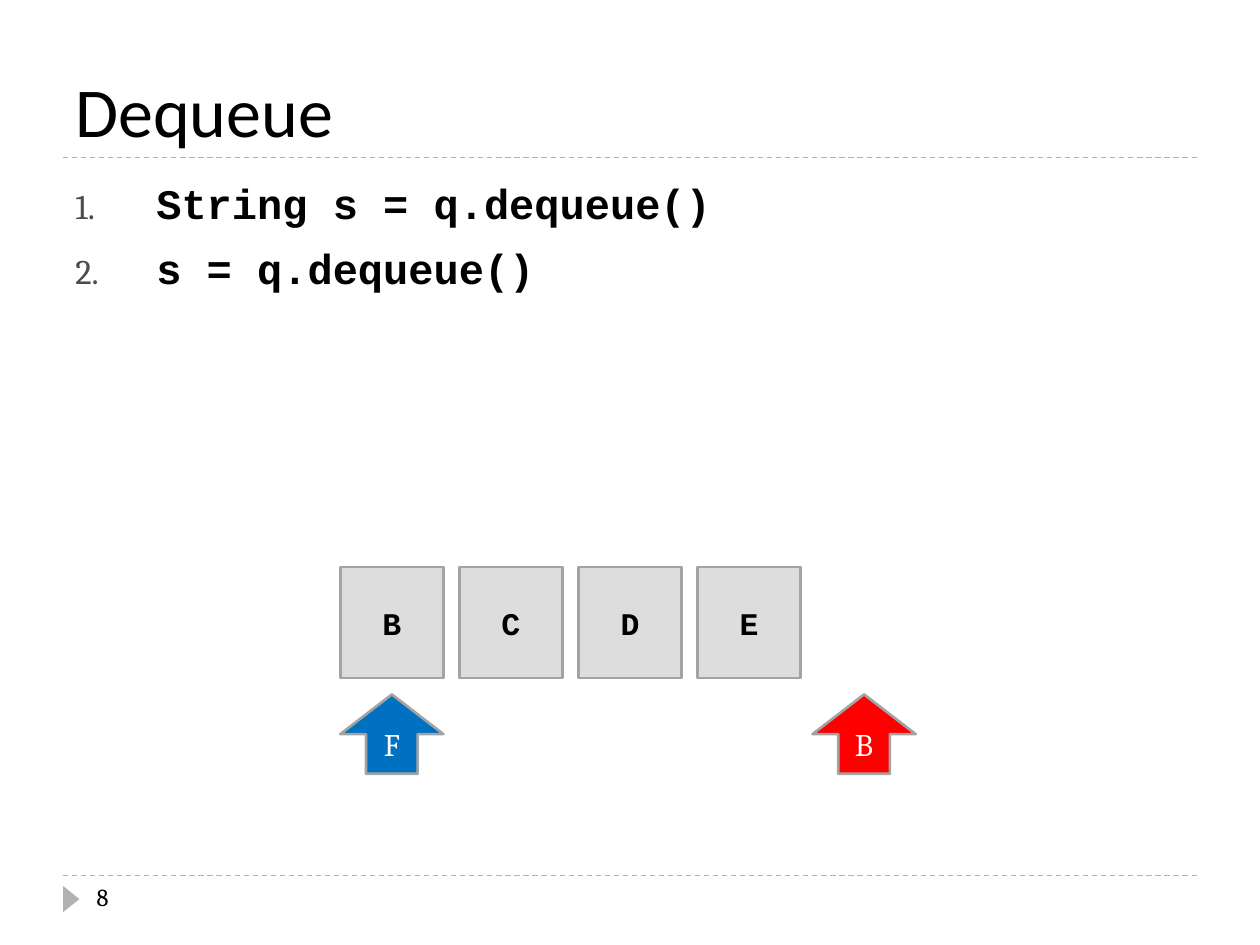
from lxml import etree
from pptx import Presentation
from pptx.dml.color import RGBColor
from pptx.enum.dml import MSO_LINE
from pptx.enum.shapes import MSO_CONNECTOR, MSO_SHAPE
from pptx.enum.text import MSO_ANCHOR, PP_ALIGN
from pptx.oxml.ns import qn
from pptx.util import Cm, Pt

DASH = MSO_LINE.DASH
LINE = MSO_CONNECTOR.STRAIGHT
RECT = MSO_SHAPE.RECTANGLE
ARROW = MSO_SHAPE.UP_ARROW
WEDGE = MSO_SHAPE.ISOSCELES_TRIANGLE
TOP, MID, LOW = MSO_ANCHOR.TOP, MSO_ANCHOR.MIDDLE, MSO_ANCHOR.BOTTOM
CENTER = PP_ALIGN.CENTER

HEX = {
    "text": "000000",
    "light": "FFFFFF",
    "num": "4D4D4D",
    "rule": "B2B2B2",
    "edge": "A3A3A3",
    "cell": "DDDDDD",
    "front": "0070C0",
    "back": "FF0000",
}
HEAD, BODY, CODE = "Calibri", "Cambria", "Courier New"

LEFT, WIDE = 1.27, 22.86
CELL_X, CELL_Y, CELL_W, CELL_H, STEP = 6.86, 11.43, 2.08, 2.24, 2.4
MARK_Y, MARK_H, BACK_X = 14.0, 1.6, 16.38


def color(key):
    return RGBColor.from_string(HEX[key])


def add_run(para, text, size, font, key="text", bold=False):
    run = para.add_run()
    run.text = text
    run.font.size = Pt(size)
    run.font.name = font
    run.font.bold = bold
    run.font.color.rgb = color(key)


def add_box(slide, x, y, w, h, anchor=TOP):
    box = slide.shapes.add_textbox(Cm(x), Cm(y), Cm(w), Cm(h))
    frame = box.text_frame
    frame.word_wrap = True
    frame.vertical_anchor = anchor
    return frame


def add_rule(slide, y):
    rule = slide.shapes.add_connector(
        LINE, Cm(LEFT), Cm(y), Cm(LEFT + WIDE), Cm(y))
    rule.line.color.rgb = color("rule")
    rule.line.width = Pt(0.75)
    rule.line.dash_style = DASH
    etree.SubElement(rule._element.spPr, qn("a:effectLst"))


def add_form(slide, kind, x, y, w, h, fill):
    form = slide.shapes.add_shape(kind, Cm(x), Cm(y), Cm(w), Cm(h))
    form.shadow.inherit = False
    form.fill.solid()
    form.fill.fore_color.rgb = color(fill)
    form.line.fill.background()
    return form


def add_label(slide, kind, x, y, h, fill, text, font, key, bold=False):
    form = add_form(slide, kind, x, y, CELL_W, h, fill)
    form.line.color.rgb = color("edge")
    form.line.width = Pt(1.5)
    frame = form.text_frame
    frame.vertical_anchor = MID
    para = frame.paragraphs[0]
    para.alignment = CENTER
    add_run(para, text, 18, font, key, bold)


def number(para):
    para.space_before = Pt(6)
    props = para._p.get_or_add_pPr()
    props.set("marL", str(Cm(1.43)))
    props.set("indent", str(Cm(-1.43)))
    tint = etree.SubElement(props, qn("a:buClr"))
    etree.SubElement(tint, qn("a:srgbClr"), val=HEX["num"])
    etree.SubElement(props, qn("a:buSzPct"), val="76000")
    etree.SubElement(props, qn("a:buFont"), typeface=BODY)
    etree.SubElement(props, qn("a:buAutoNum"), type="arabicPeriod")


def add_steps(slide, steps):
    frame = add_box(slide, LEFT, 3.38, WIDE, 13.72)
    for i, step in enumerate(steps):
        para = frame.add_paragraph() if i else frame.paragraphs[0]
        number(para)
        add_run(para, " ", 26, BODY)
        add_run(para, step, 24, CODE, bold=True)
        add_run(para, " ", 26, BODY)


def main():
    deck = Presentation()
    deck.slide_width, deck.slide_height = Cm(25.4), Cm(19.05)
    slide = deck.slides.add_slide(deck.slide_layouts[6])

    for y in (17.65, 3.18):
        add_rule(slide, y)
    wedge = add_form(slide, WEDGE, 1.17, 17.96, 0.53, 0.33, "rule")
    wedge.rotation = 90

    title = add_box(slide, LEFT, 0.43, WIDE, 2.75, LOW)
    add_run(title.paragraphs[0], "Dequeue", 40, HEAD)
    add_steps(slide, ["String s = q.dequeue()", "s = q.dequeue()"])
    page = add_box(slide, 1.7, 17.65, 5.51, 1.02)
    add_run(page.paragraphs[0], "8", 14, BODY)

    for i, name in enumerate("BCDE"):
        add_label(slide, RECT, CELL_X + i * STEP, CELL_Y, CELL_H,
                  "cell", name, CODE, "text", True)
    for name, x, fill in (("F", CELL_X, "front"), ("B", BACK_X, "back")):
        add_label(slide, ARROW, x, MARK_Y, MARK_H,
                  fill, name, BODY, "light")

    deck.save("out.pptx")


if __name__ == "__main__":
    main()
